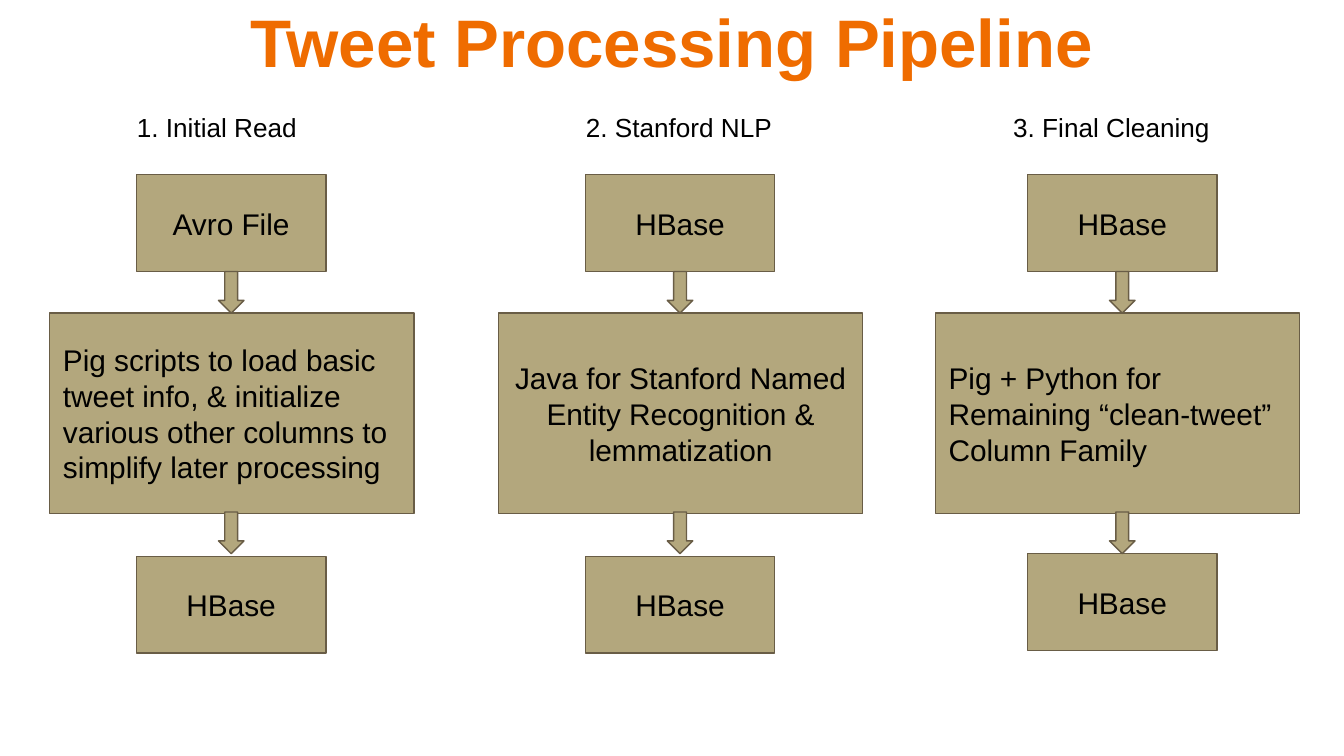
from dataclasses import dataclass

from pptx import Presentation
from pptx.dml.color import RGBColor
from pptx.enum.shapes import MSO_SHAPE
from pptx.enum.text import MSO_ANCHOR, MSO_AUTO_SIZE, PP_ALIGN
from pptx.util import Inches, Pt


@dataclass(frozen=True)
class Theme:
    font: str = "Arial"
    title_color: RGBColor = RGBColor(0xEF, 0x6C, 0x00)
    text_color: RGBColor = RGBColor(0x00, 0x00, 0x00)
    fill_color: RGBColor = RGBColor(0xB3, 0xA7, 0x7D)
    line_color: RGBColor = RGBColor(0x69, 0x5D, 0x46)
    title_size: int = 36
    box_size: int = 16
    label_size: int = 14
    line_width: float = 0.75
    line_spacing: float = 1.0
    inset: float = 0.1


@dataclass(frozen=True)
class Stage:
    label: str
    label_left: float
    label_width: float
    center: float
    source: str
    process: str
    process_left: float
    process_align: PP_ALIGN
    result: str
    result_top: float


THEME = Theme()
NODE_WIDTH, NODE_HEIGHT = 1.41, 0.72
PROCESS_WIDTH, PROCESS_HEIGHT = 2.71, 1.49
ARROW_WIDTH, ARROW_HEIGHT = 0.19, 0.31
LABEL_TOP, LABEL_HEIGHT = 0.73, 0.62
SOURCE_TOP, PROCESS_TOP = 1.3, 2.33
ARROW_TOPS = (2.02, 3.81)

STAGES = (
    Stage("1. Initial Read", 0.92, 1.48, 1.72, "Avro File",
          "Pig scripts to load basic tweet info, & initialize various other "
          "columns to simplify later processing",
          0.37, PP_ALIGN.LEFT, "HBase", 4.14),
    Stage("2. Stanford NLP", 4.26, 1.61, 5.06, "HBase",
          "Java for Stanford Named Entity Recognition & lemmatization",
          3.71, PP_ALIGN.CENTER, "HBase", 4.14),
    Stage("3. Final Cleaning", 7.44, 1.82, 8.35, "HBase",
          "Pig + Python for Remaining “clean-tweet” Column Family",
          6.96, PP_ALIGN.LEFT, "HBase", 4.12),
)


def write_text(shape, text, *, size, color=THEME.text_color, bold=False,
               align=PP_ALIGN.LEFT, anchor=MSO_ANCHOR.TOP):
    frame = shape.text_frame
    frame.word_wrap = True
    frame.auto_size = MSO_AUTO_SIZE.NONE
    frame.vertical_anchor = anchor
    frame.margin_left = frame.margin_right = Inches(THEME.inset)
    frame.margin_top = frame.margin_bottom = Inches(THEME.inset)
    paragraph = frame.paragraphs[0]
    paragraph.alignment = align
    paragraph.line_spacing = THEME.line_spacing
    paragraph.space_before = Pt(0)
    run = paragraph.add_run()
    run.text = text
    run.font.name = THEME.font
    run.font.size = Pt(size)
    run.font.bold = bold
    run.font.color.rgb = color


class SlideBuilder:
    def __init__(self, slide, theme):
        self.slide = slide
        self.theme = theme

    def title(self, text, left, top, width, height):
        shape = self.slide.shapes.title
        shape.left, shape.top = Inches(left), Inches(top)
        shape.width, shape.height = Inches(width), Inches(height)
        write_text(shape, text, size=self.theme.title_size, bold=True,
                   color=self.theme.title_color, align=PP_ALIGN.CENTER)

    def label(self, text, left, top, width, height):
        shape = self.slide.shapes.add_textbox(
            Inches(left), Inches(top), Inches(width), Inches(height))
        write_text(shape, text, size=self.theme.label_size)

    def preset(self, kind, left, top, width, height):
        shape = self.slide.shapes.add_shape(
            kind, Inches(left), Inches(top), Inches(width), Inches(height))
        shape.shadow.inherit = False
        shape.fill.solid()
        shape.fill.fore_color.rgb = self.theme.fill_color
        shape.line.color.rgb = self.theme.line_color
        shape.line.width = Pt(self.theme.line_width)
        return shape

    def box(self, text, left, top, width, height, align=PP_ALIGN.CENTER):
        shape = self.preset(MSO_SHAPE.RECTANGLE, left, top, width, height)
        write_text(shape, text, size=self.theme.box_size, align=align,
                   anchor=MSO_ANCHOR.MIDDLE)

    def node(self, text, center, top):
        self.box(text, center - NODE_WIDTH / 2, top, NODE_WIDTH, NODE_HEIGHT)

    def arrow(self, center, top):
        self.preset(MSO_SHAPE.DOWN_ARROW, center - ARROW_WIDTH / 2, top,
                    ARROW_WIDTH, ARROW_HEIGHT)

    def stage(self, stage):
        self.node(stage.source, stage.center, SOURCE_TOP)
        self.box(stage.process, stage.process_left, PROCESS_TOP,
                 PROCESS_WIDTH, PROCESS_HEIGHT, stage.process_align)
        self.node(stage.result, stage.center, stage.result_top)
        self.label(stage.label, stage.label_left, LABEL_TOP,
                   stage.label_width, LABEL_HEIGHT)
        for top in ARROW_TOPS:
            self.arrow(stage.center, top)


def main():
    presentation = Presentation()
    presentation.slide_width = Inches(10)
    presentation.slide_height = presentation.slide_width * 9 // 16
    slide = presentation.slides.add_slide(presentation.slide_layouts[5])
    builder = SlideBuilder(slide, THEME)
    builder.title("Tweet Processing Pipeline", 0.34, -0.1, 9.32, 0.77)
    for stage in STAGES:
        builder.stage(stage)
    presentation.save("out.pptx")


if __name__ == "__main__":
    main()
